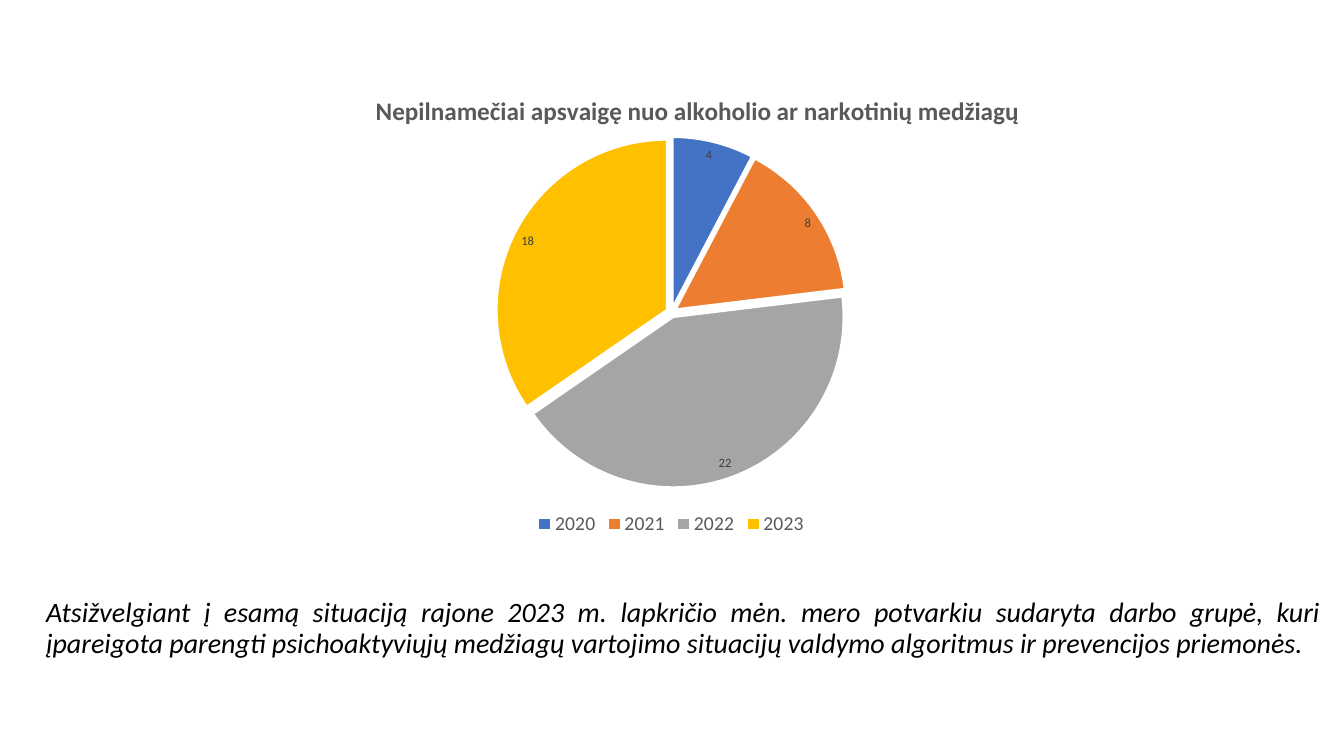
from dataclasses import dataclass

from lxml import etree
from pptx import Presentation
from pptx.chart.data import CategoryChartData
from pptx.dml.color import RGBColor
from pptx.enum.chart import XL_CHART_TYPE, XL_LABEL_POSITION, XL_LEGEND_POSITION
from pptx.enum.text import PP_ALIGN
from pptx.oxml.ns import qn
from pptx.util import Inches, Pt

PIE = XL_CHART_TYPE.PIE
INSIDE = XL_LABEL_POSITION.INSIDE_END
BOTTOM = XL_LEGEND_POSITION.BOTTOM
JUSTIFY = PP_ALIGN.JUSTIFY


@dataclass(frozen=True)
class Theme:
    face: str = "Calibri"
    ink: str = "000000"
    grey: str = "595959"
    dark: str = "404040"
    edge: str = "FFFFFF"
    slices: tuple = ("4472C4", "ED7D31", "A5A5A5", "FFC000")
    title: int = 18
    body: int = 20
    legend: int = 14
    base: int = 10
    label: int = 9


THEME = Theme()
TITLE = "Nepilnamečiai apsvaigę nuo alkoholio ar narkotinių medžiagų"
CASES = {"2020": 4, "2021": 8, "2022": 22, "2023": 18}
NOTE = (
    "Atsižvelgiant į esamą situaciją rajone 2023 m. lapkričio mėn. mero potvarkiu "
    "sudaryta darbo grupė, kuri įpareigota parengti psichoaktyviųjų medžiagų "
    "vartojimo situacijų valdymo algoritmus ir prevencijos priemonės."
)


def set_font(font, size, color, bold=False, italic=False):
    font.name = THEME.face
    font.size = Pt(size)
    font.bold = bold
    font.italic = italic
    font.color.rgb = RGBColor.from_string(color)


def add_text(frame, text, align=None, spacing=None, before=None, **style):
    para = frame.paragraphs[0]
    para.alignment = align
    para.line_spacing = spacing
    para.space_before = before
    run = para.add_run()
    run.text = text
    set_font(run.font, **style)


def set_layout(parent, index, **parts):
    """Place a chart part by fractions of the chart's size."""
    old = parent.find(qn("c:layout"))
    if old is not None:
        parent.remove(old)
    layout = etree.Element(qn("c:layout"))
    manual = etree.SubElement(layout, qn("c:manualLayout"))
    for name, value in parts.items():
        etree.SubElement(manual, qn(f"c:{name}")).set("val", str(value))
    parent.insert(index, layout)


def paint_slices(series, gap):
    for index, color in enumerate(THEME.slices):
        form = series.points[index].format
        form.fill.solid()
        form.fill.fore_color.rgb = RGBColor.from_string(color)
        form.line.color.rgb = RGBColor.from_string(THEME.edge)
        form.line.width = Pt(1.5)
    for point in series._element.findall(qn("c:dPt")):
        burst = etree.Element(qn("c:explosion"))
        burst.set("val", str(gap))
        point.find(qn("c:spPr")).addprevious(burst)


def add_pie(slide, left, top, width, height):
    data = CategoryChartData()
    data.categories = list(CASES)
    data.add_series(TITLE, list(CASES.values()))
    box = [Inches(side) for side in (left, top, width, height)]
    chart = slide.shapes.add_chart(PIE, *box, data).chart
    set_font(chart.font, THEME.base, THEME.ink)

    chart.has_title = True
    title = chart.chart_title
    add_text(title.text_frame, TITLE, size=THEME.title, color=THEME.grey, bold=True)
    title.include_in_layout = False
    set_layout(title._element, 1, xMode="edge", yMode="edge", x=0.16, y=0.06)

    chart.has_legend = True
    chart.legend.position = BOTTOM
    chart.legend.include_in_layout = False
    set_font(chart.legend.font, THEME.legend, THEME.grey)

    plot = chart.plots[0]
    plot.vary_by_categories = True
    paint_slices(plot.series[0], gap=3)
    plot.has_data_labels = True
    labels = plot.data_labels
    labels.show_value = True
    labels.show_percentage = False
    labels.position = INSIDE
    set_font(labels.font, THEME.label, THEME.dark)

    area = plot._element.getparent()
    set_layout(area, 0, layoutTarget="inner", xMode="edge", yMode="edge",
               x=0.3, y=0.17, w=0.4, h=0.71)


def add_note(slide, left, top, width, height):
    box = [Inches(side) for side in (left, top, width, height)]
    frame = slide.shapes.add_textbox(*box).text_frame
    frame.word_wrap = True
    add_text(frame, NOTE, align=JUSTIFY, spacing=0.9, before=Pt(10),
             size=THEME.body, color=THEME.ink, italic=True)


def main():
    deck = Presentation()
    deck.slide_width = Inches(13.33)
    deck.slide_height = Inches(7.5)
    slide = deck.slides.add_slide(deck.slide_layouts[6])
    add_note(slide, 0.36, 5.89, 12.84, 1.32)
    add_pie(slide, 2.28, 0.6, 8.76, 4.76)
    deck.save("out.pptx")


if __name__ == "__main__":
    main()
